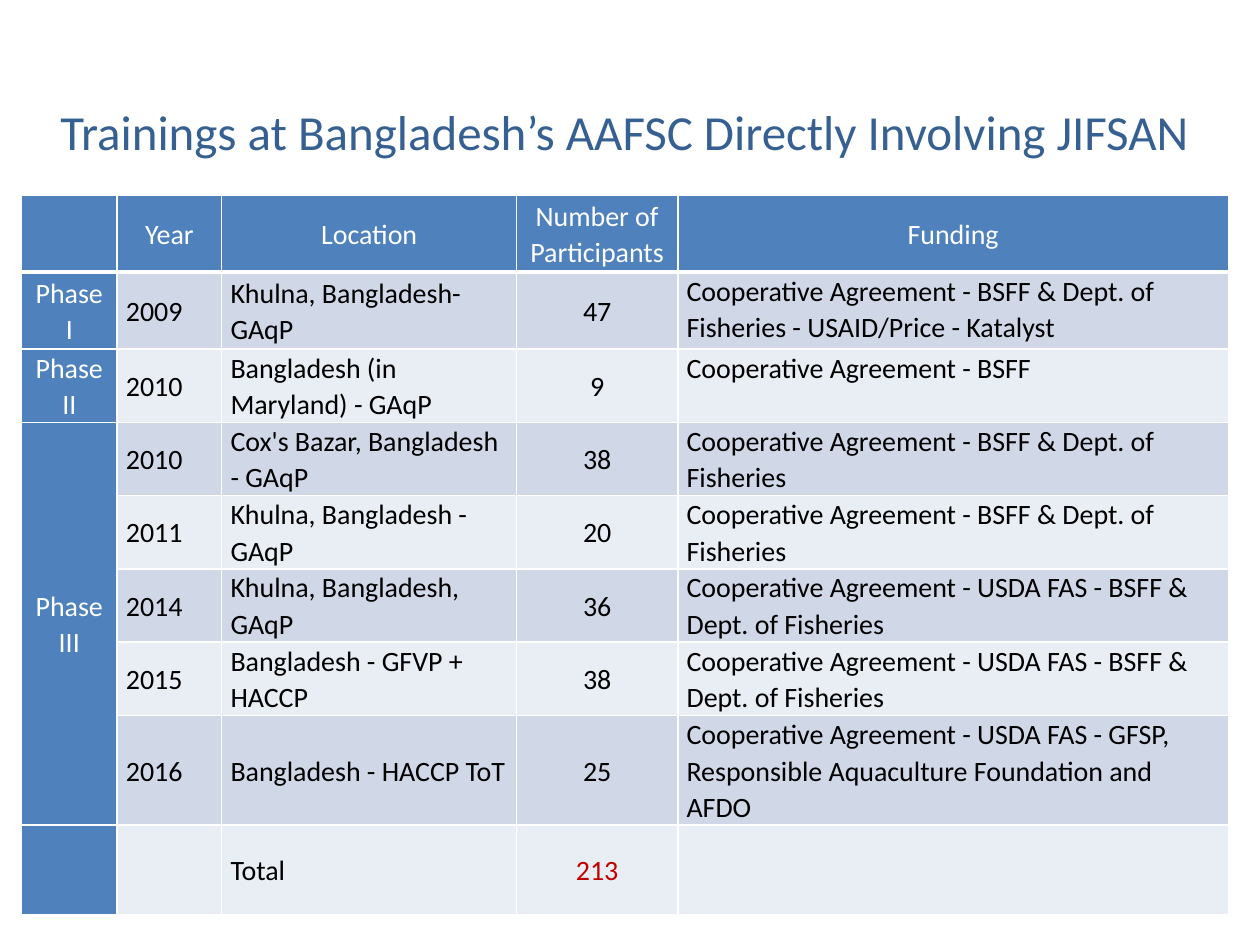
from lxml import etree
from pptx import Presentation
from pptx import util as u
from pptx.dml.color import RGBColor
from pptx.enum import text
from pptx.oxml import ns

BLUE = RGBColor(0x4F, 0x81, 0xBD)
TITLE_BLUE = RGBColor(0x37, 0x60, 0x92)
BAND_DARK = RGBColor(0xD0, 0xD8, 0xE8)
BAND_LIGHT = RGBColor(0xE9, 0xED, 0xF4)
RED = RGBColor(0xC0, 0x00, 0x00)
BLACK = RGBColor(0x00, 0x00, 0x00)
WHITE = RGBColor(0xFF, 0xFF, 0xFF)

FONT = "Calibri"
TITLE = "Trainings at Bangladesh’s AAFSC Directly Involving JIFSAN"
AGREEMENT = "Cooperative Agreement - "
FISHERIES = "BSFF & Dept. of Fisheries"
HEADER = ("", "Year", "Location", "Number of Participants", "Funding")
TRAININGS = [
    ("Phase I", "2009", "Khulna, Bangladesh- GAqP", 47, FISHERIES + " - USAID/Price - Katalyst"),
    ("Phase II", "2010", "Bangladesh (in Maryland) - GAqP", 9, "BSFF"),
    ("Phase III", "2010", "Cox's Bazar, Bangladesh - GAqP", 38, FISHERIES),
    ("", "2011", "Khulna, Bangladesh - GAqP", 20, FISHERIES),
    ("", "2014", "Khulna, Bangladesh, GAqP", 36, "USDA FAS - " + FISHERIES),
    ("", "2015", "Bangladesh - GFVP + HACCP", 38, "USDA FAS - " + FISHERIES),
    ("", "2016", "Bangladesh - HACCP ToT", 25,
     "USDA FAS - GFSP, Responsible Aquaculture Foundation and AFDO"),
]
TOTAL = ("", "", "Total", sum(t[3] for t in TRAININGS), "")
ROWS = [HEADER, *((*t[:4], AGREEMENT + t[4]) for t in TRAININGS), TOTAL]
COL_WIDTHS = (0.76, 0.83, 2.34, 1.28, 4.37)
ROW_HEIGHTS = (0.61, 0.61, 0.47, 0.5, 0.46, 0.51, 0.43, 0.65, 0.71)
PHASE_III = (3, 7)
MARGINS = {"margin_left": u.Inches(0.07), "margin_right": u.Inches(0.07),
           "margin_top": 0, "margin_bottom": 0}


def set_attrs(obj, values):
    for name, value in values.items():
        setattr(obj, name, value)


def set_font(p, size, color):
    set_attrs(p.font, {"name": FONT, "size": u.Pt(size), "bold": False})
    p.font.color.rgb = color


def add_borders(cell, header):
    tc_pr = cell._tc.get_or_add_tcPr()
    for side in "LRTB":
        width = 3 if header and side == "B" else 1
        ln = etree.SubElement(tc_pr, ns.qn("a:ln" + side), w=str(u.Pt(width)))
        fill = etree.SubElement(ln, ns.qn("a:solidFill"))
        etree.SubElement(fill, ns.qn("a:srgbClr"), val=str(WHITE))


def format_cell(cell, row, col, value):
    header, blue = row == 0, row == 0 or col == 0
    add_borders(cell, header)
    cell.fill.solid()
    cell.fill.fore_color.rgb = BLUE if blue else BAND_DARK if row % 2 else BAND_LIGHT
    top = col == 4 and not header
    anchor = text.MSO_ANCHOR.TOP if top else text.MSO_ANCHOR.MIDDLE
    set_attrs(cell, {**MARGINS, "vertical_anchor": anchor})
    p = cell.text_frame.paragraphs[0]
    centered = blue or col == 3
    set_attrs(p, {"line_spacing": 1.07,
                  "alignment": text.PP_ALIGN.CENTER if centered else text.PP_ALIGN.LEFT})
    if value != "":
        r = p.add_run()
        r.text = str(value)
        is_total = row == len(ROWS) - 1 and col == 3
        set_font(r, 16, WHITE if blue else RED if is_total else BLACK)


def main():
    prs = Presentation()
    set_attrs(prs, {"slide_width": u.Inches(10), "slide_height": u.Inches(7.5)})
    s = prs.slides.add_slide(prs.slide_layouts[5])

    title = s.shapes.title
    set_attrs(title, {"left": u.Inches(0.33), "top": u.Inches(0.52),
                      "width": u.Inches(9.25), "height": u.Inches(1.03)})
    tf = title.text_frame
    set_attrs(tf, {"text": TITLE, "word_wrap": True, "vertical_anchor": text.MSO_ANCHOR.MIDDLE})
    p = tf.paragraphs[0]
    p.alignment = text.PP_ALIGN.CENTER
    set_font(p.runs[0], 28, TITLE_BLUE)

    frame = s.shapes.add_table(len(ROWS), len(HEADER), u.Inches(0.17), u.Inches(1.55),
                               u.Inches(sum(COL_WIDTHS)), u.Inches(sum(ROW_HEIGHTS)))
    table = frame.table
    for column, width in zip(table.columns, COL_WIDTHS):
        column.width = u.Inches(width)
    for row, height in zip(table.rows, ROW_HEIGHTS):
        row.height = u.Inches(height)
    for i, values in enumerate(ROWS):
        for j, value in enumerate(values):
            format_cell(table.cell(i, j), i, j, value)
    first, last = PHASE_III
    table.cell(first, 0).merge(table.cell(last, 0))
    prs.save("out.pptx")


if __name__ == "__main__":
    main()
